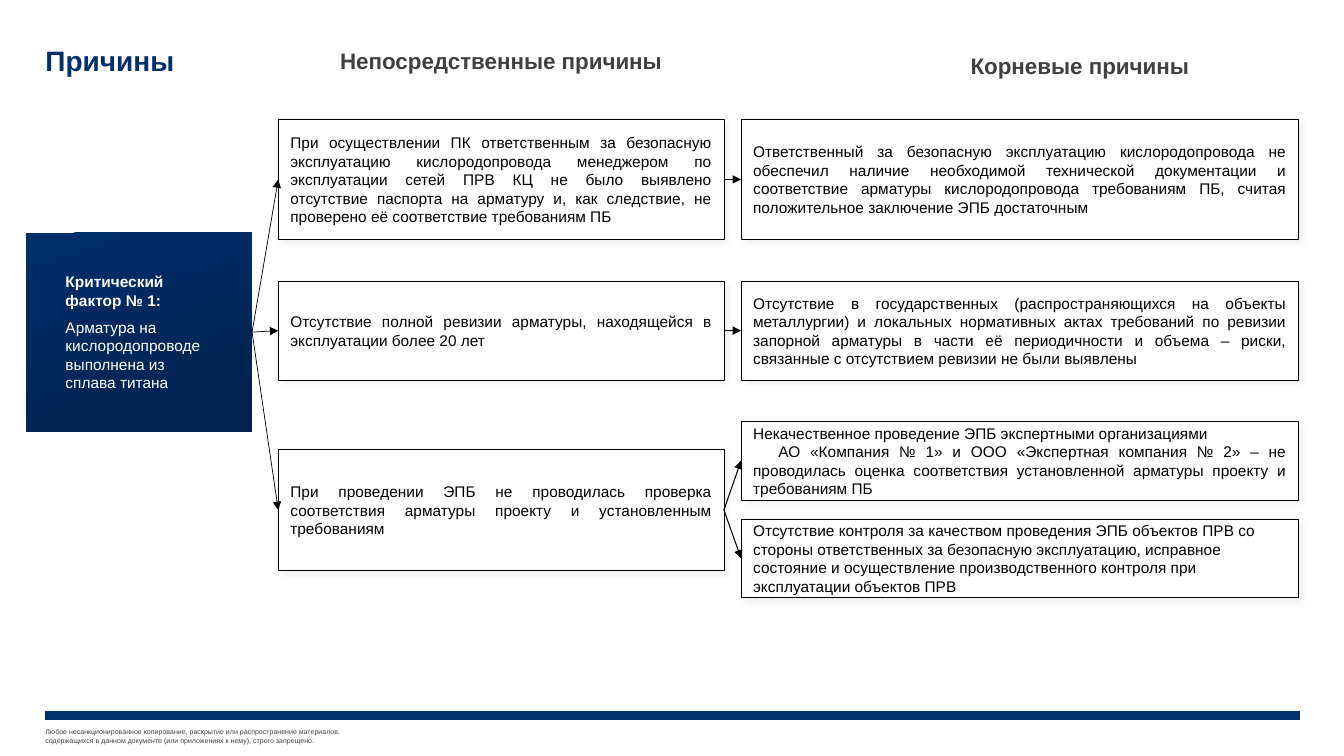
from dataclasses import dataclass

from lxml.etree import SubElement
from pptx import Presentation
from pptx.dml.color import RGBColor
from pptx.enum.shapes import MSO_CONNECTOR, MSO_SHAPE
from pptx.enum.text import MSO_ANCHOR, MSO_AUTO_SIZE, PP_ALIGN
from pptx.oxml.ns import qn
from pptx.shapes.autoshape import Shape
from pptx.shapes.connector import Connector
from pptx.slide import Slide
from pptx.util import Inches, Pt

NAVY = RGBColor(0x00, 0x2F, 0x6C)
DARK_NAVY = RGBColor(0x00, 0x23, 0x51)
GREY = RGBColor(0x40, 0x40, 0x40)
BLACK = RGBColor(0x00, 0x00, 0x00)
WHITE = RGBColor(0xFF, 0xFF, 0xFF)

FONT = "Arial"
RIGHT_SIDE, LEFT_SIDE = 3, 1
DIRECT_LEFT, DIRECT_WIDTH = 2.76, 4.42
ROOT_LEFT, ROOT_WIDTH = 7.35, 5.53


@dataclass(frozen=True)
class Cause:
    top: float
    height: float
    paragraphs: tuple[str, ...]
    align: PP_ALIGN = PP_ALIGN.JUSTIFY
    second_indent: float = 0


@dataclass(frozen=True)
class Chain:
    """A direct cause with the root causes it leads to."""
    direct: Cause
    roots: tuple[Cause, ...]


CHAINS = (
    Chain(
        Cause(1.18, 1.2, (
            "При осуществлении ПК ответственным за безопасную эксплуатацию "
            "кислородопровода менеджером по эксплуатации сетей ПРВ КЦ не было "
            "выявлено отсутствие паспорта на арматуру и, как следствие, не "
            "проверено её соответствие требованиям ПБ",)),
        (Cause(1.18, 1.2, (
            "Ответственный за безопасную эксплуатацию кислородопровода не "
            "обеспечил наличие необходимой технической документации и "
            "соответствие арматуры кислородопровода требованиям ПБ, считая "
            "положительное заключение ЭПБ достаточным",)),)),
    Chain(
        Cause(2.79, 0.98, (
            "Отсутствие полной ревизии арматуры, находящейся в эксплуатации "
            "более 20 лет",)),
        (Cause(2.79, 0.98, (
            "Отсутствие в государственных (распространяющихся на объекты "
            "металлургии) и локальных нормативных актах требований по ревизии "
            "запорной арматуры в части её периодичности и объема – риски, "
            "связанные с отсутствием ревизии не были выявлены",)),)),
    Chain(
        Cause(4.46, 1.2, (
            "При проведении ЭПБ не проводилась проверка соответствия арматуры "
            "проекту и установленным требованиям",)),
        (Cause(4.18, 0.78, (
            "Некачественное проведение ЭПБ экспертными организациями",
            "АО «Компания № 1» и ООО «Экспертная компания № 2» – не "
            "проводилась оценка соответствия установленной арматуры проекту и "
            "требованиям ПБ"), second_indent=0.25),
         Cause(5.15, 0.78, (
            "Отсутствие контроля за качеством проведения ЭПБ объектов ПРВ со "
            "стороны ответственных за безопасную эксплуатацию, исправное "
            "состояние и осуществление производственного контроля при "
            "эксплуатации объектов ПРВ",), align=PP_ALIGN.LEFT))),
)


def write_text(shape: Shape, *paragraphs: str, size: float, color: RGBColor,
               bold: bool = False, align: PP_ALIGN = PP_ALIGN.LEFT,
               anchor: MSO_ANCHOR = MSO_ANCHOR.MIDDLE, side_inset: float = 0,
               top_inset: float = 0, space_after: float = 0) -> None:
    """Fill a shape with paragraphs that share one format."""
    frame = shape.text_frame
    frame.word_wrap = True
    frame.auto_size = MSO_AUTO_SIZE.NONE
    frame.vertical_anchor = anchor
    frame.margin_left = frame.margin_right = Inches(side_inset)
    frame.margin_top, frame.margin_bottom = Inches(top_inset), 0
    frame.text = "\n".join(paragraphs)
    for paragraph in frame.paragraphs:
        paragraph.alignment = align
        paragraph.space_after = Pt(space_after)
        paragraph.font.name = FONT
        paragraph.font.size = Pt(size)
        paragraph.font.bold = bold
        paragraph.font.color.rgb = color


def add_rectangle(slide: Slide, left: float, top: float,
                  width: float, height: float) -> Shape:
    shape = slide.shapes.add_shape(MSO_SHAPE.RECTANGLE, Inches(left), Inches(top),
                                   Inches(width), Inches(height))
    shape.shadow.inherit = False
    shape.fill.solid()
    shape.fill.fore_color.rgb = WHITE
    shape.line.fill.background()
    return shape


def add_soft_shadow(shape: Shape) -> None:
    effects = shape.element.spPr.find(qn("a:effectLst"))
    shadow = SubElement(effects, qn("a:outerShdw"), blurRad=str(Pt(4)),
                        dist=str(Pt(3)), dir=str(45 * 60000), algn="tl",
                        rotWithShape="0")
    color = SubElement(shadow, qn("a:srgbClr"), val=str(BLACK))
    SubElement(color, qn("a:alpha"), val="5000")


def add_cause(slide: Slide, cause: Cause, left: float, width: float) -> Shape:
    box = add_rectangle(slide, left, cause.top, width, cause.height)
    box.line.color.rgb = BLACK
    box.line.width = Pt(0.5)
    add_soft_shadow(box)
    write_text(box, *cause.paragraphs, size=11, color=BLACK, align=cause.align,
               side_inset=0.12)
    for paragraph in box.text_frame.paragraphs[1:]:
        properties = paragraph._p.get_or_add_pPr()
        properties.set("marL", "0")
        properties.set("indent", str(Inches(cause.second_indent)))
    return box


def add_line(slide: Slide, left: float, right: float, y: float,
             color: RGBColor, width: float) -> Connector:
    line = slide.shapes.add_connector(MSO_CONNECTOR.STRAIGHT, Inches(left),
                                      Inches(y), Inches(right), Inches(y))
    line.line.color.rgb = color
    line.line.width = Pt(width)
    SubElement(line.element.spPr, qn("a:effectLst"))
    return line


def add_arrow(slide: Slide, source: Shape, target: Shape, width: float) -> None:
    arrow = add_line(slide, 0, 1, 0, BLACK, width)
    arrow.begin_connect(source, RIGHT_SIDE)
    arrow.end_connect(target, LEFT_SIDE)
    SubElement(arrow.element.spPr.find(qn("a:ln")), qn("a:tailEnd"), type="triangle")


def add_factor(slide: Slide) -> Shape:
    factor = add_rectangle(slide, 0.26, 2.31, 2.24, 1.97)
    factor.fill.gradient()
    factor.fill.gradient_angle = 290
    stops = zip(factor.fill.gradient_stops, (NAVY, DARK_NAVY), (0, 0.86))
    for stop, color, position in stops:
        stop.color.rgb = color
        stop.position = position
    write_text(factor, "Критический фактор № 1:",
               "Арматура на кислородопроводе выполнена из сплава титана",
               size=11, color=WHITE, side_inset=0.39, space_after=6)
    factor.text_frame.paragraphs[0].font.bold = True
    return factor


def add_title(slide: Slide) -> None:
    title = slide.shapes.title
    title.left, title.top = Inches(0.45), Inches(0.3)
    title.width, title.height = Inches(11.35), Inches(0.61)
    write_text(title, "Причины", size=20, color=NAVY, bold=True, top_inset=0.04)
    title.text_frame.paragraphs[0].line_spacing = 0.85


def add_headings(slide: Slide) -> None:
    for text, left, top, width in (("Непосредственные причины", 3.36, 0.47, 3.22),
                                   ("Корневые причины", 9.42, 0.52, 2.58)):
        heading = add_rectangle(slide, left, top, width, 0.27)
        write_text(heading, text, size=16, color=GREY, bold=True,
                   align=PP_ALIGN.CENTER, anchor=MSO_ANCHOR.TOP, space_after=6)


def add_footer(slide: Slide) -> None:
    add_line(slide, 0.45, 12.89, 7.1, NAVY, 6)
    notice = slide.shapes.add_textbox(Inches(0.45), Inches(7.22),
                                      Inches(5.12), Inches(0.17))
    write_text(notice, "Любое несанкционированное копирование, раскрытие или "
               "распространение материалов,\vсодержащихся в данном документе "
               "(или приложениях к нему), строго запрещено.", size=5, color=GREY)


def main() -> None:
    presentation = Presentation()
    presentation.slide_width, presentation.slide_height = Inches(13.33), Inches(7.5)
    slide = presentation.slides.add_slide(presentation.slide_layouts[5])
    add_footer(slide)
    add_title(slide)
    add_headings(slide)
    factor = add_factor(slide)
    for chain in CHAINS:
        direct = add_cause(slide, chain.direct, DIRECT_LEFT, DIRECT_WIDTH)
        add_arrow(slide, factor, direct, 0.5)
        for cause in chain.roots:
            root = add_cause(slide, cause, ROOT_LEFT, ROOT_WIDTH)
            add_arrow(slide, direct, root, 0.75)
    presentation.save("out.pptx")


if __name__ == "__main__":
    main()
